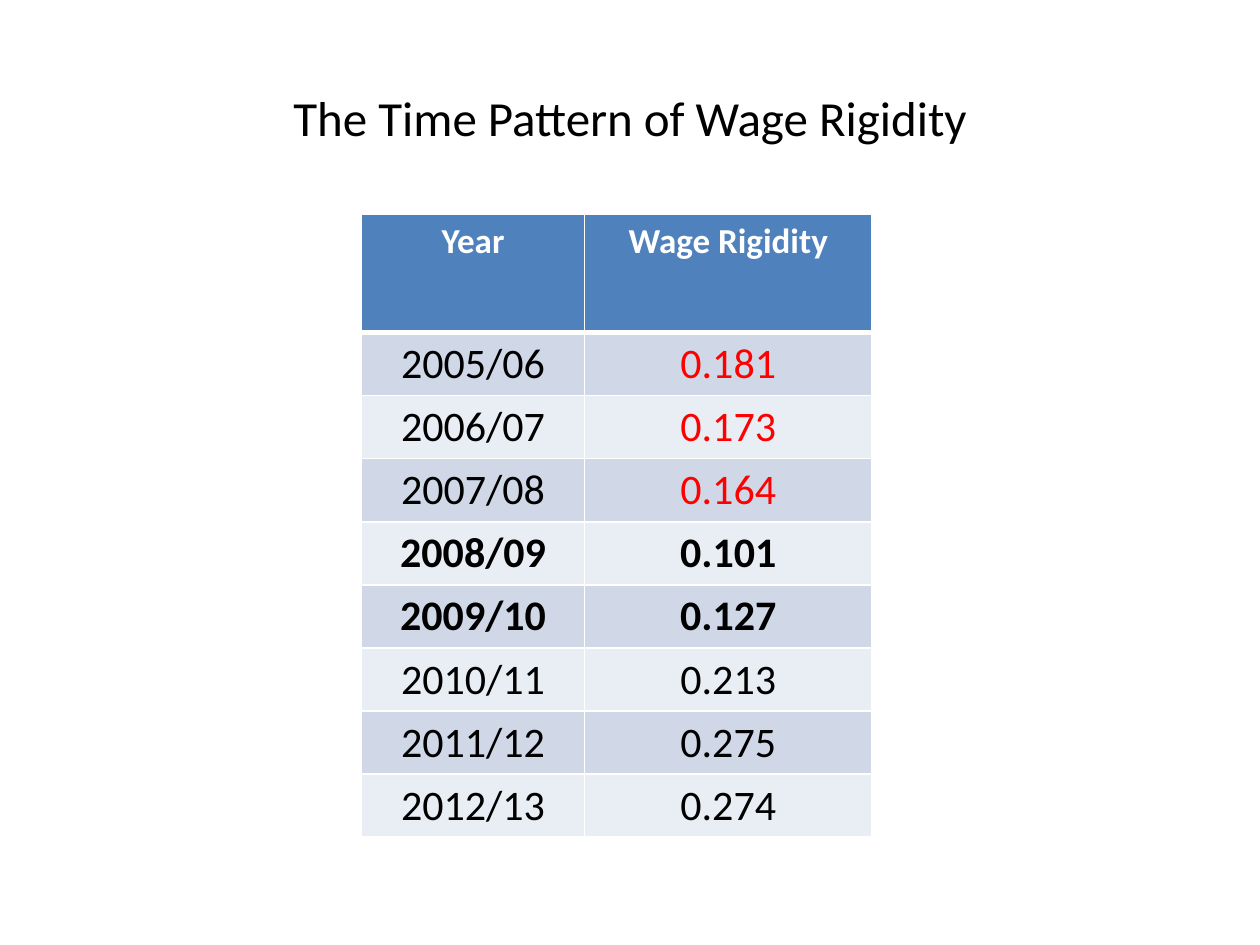
from dataclasses import dataclass

from lxml.etree import SubElement
from pptx import Presentation
from pptx.dml.color import RGBColor
from pptx.enum.text import MSO_ANCHOR, PP_ALIGN
from pptx.oxml.ns import qn
from pptx.util import Inches, Pt


@dataclass(frozen=True)
class Theme:
    """Colours, font and type sizes of the slide."""
    font: str = "Calibri"
    black: str = "000000"
    white: str = "FFFFFF"
    red: str = "FF0000"
    blue: str = "4F81BD"
    bands: tuple = ("D0D8E8", "E9EDF4")
    title: int = 28
    head: int = 20
    body: int = 24
    thin: int = 1
    thick: int = 3


class Deck:
    """Draws each kind of element on the current slide."""

    def __init__(self, show, theme):
        """Add a blank slide to the show."""
        self.theme = theme
        self.slide = show.slides.add_slide(show.slide_layouts[6])

    def label(self, frame, text, size, color, bold=False):
        """Put one centred run in the frame."""
        para = frame.paragraphs[0]
        para.alignment = PP_ALIGN.CENTER
        run = para.add_run()
        run.text = text
        font = run.font
        font.name, font.size, font.bold = self.theme.font, Pt(size), bold
        font.color.rgb = RGBColor.from_string(color)

    def title(self, text, box):
        """Add the slide title."""
        frame = self.slide.shapes.add_textbox(*map(Inches, box)).text_frame
        frame.word_wrap = True
        frame.vertical_anchor = MSO_ANCHOR.MIDDLE
        self.label(frame, text, self.theme.title, self.theme.black)

    def border(self, cell, top, bottom):
        """Line the four sides of a cell in white."""
        props = cell._tc.get_or_add_tcPr()
        thin = self.theme.thin
        for side, width in zip("LRTB", (thin, thin, top, bottom)):
            line = SubElement(props, qn(f"a:ln{side}"), w=str(Pt(width)))
            fill = SubElement(line, qn("a:solidFill"))
            SubElement(fill, qn("a:srgbClr"), val=self.theme.white)

    def cell(self, cell, text, size, color, fill, bold, top, bottom):
        """Fill, line and label one cell."""
        self.border(cell, top, bottom)
        cell.fill.solid()
        cell.fill.fore_color.rgb = RGBColor.from_string(fill)
        self.label(cell.text_frame, text, size, color, bold)

    def table(self, head, rows, left, top, widths, heights):
        """Add the table: a head row, then banded rows with marked years."""
        look = self.theme
        tall, low = heights
        grid = self.slide.shapes.add_table(
            len(rows) + 1, len(head), Inches(left), Inches(top),
            Inches(sum(widths)), Inches(tall + low * len(rows))).table
        for col, width in zip(grid.columns, widths):
            col.width = Inches(width)
        for row in grid.rows:
            row.height = Inches(low)
        grid.rows[0].height = Inches(tall)
        for col, text in enumerate(head):
            self.cell(grid.cell(0, col), text, look.head, look.white,
                      look.blue, True, look.thin, look.thick)
        for num, (year, value, color, bold) in enumerate(rows):
            edge = look.thin if num else look.thick
            for col, (text, ink) in enumerate(((year, look.black), (value, color))):
                self.cell(grid.cell(num + 1, col), text, look.body, ink,
                          look.bands[num % 2], bold, edge, look.thin)


def main():
    """Build and save the slide."""
    show = Presentation()
    show.slide_width, show.slide_height = Inches(10), Inches(7.5)
    theme = Theme()
    deck = Deck(show, theme)
    deck.title("The Time Pattern of Wage Rigidity", (0.5, 0.3, 9, 1.25))
    rows = [
        ("2005/06", "0.181", theme.red, False),
        ("2006/07", "0.173", theme.red, False),
        ("2007/08", "0.164", theme.red, False),
        ("2008/09", "0.101", theme.black, True),
        ("2009/10", "0.127", theme.black, True),
        ("2010/11", "0.213", theme.black, False),
        ("2011/12", "0.275", theme.black, False),
        ("2012/13", "0.274", theme.black, False),
    ]
    deck.table(("Year", "Wage Rigidity"), rows, 2.87, 1.7, (1.77, 2.28), (0.94, 0.49))
    show.save("out.pptx")


if __name__ == "__main__":
    main()
